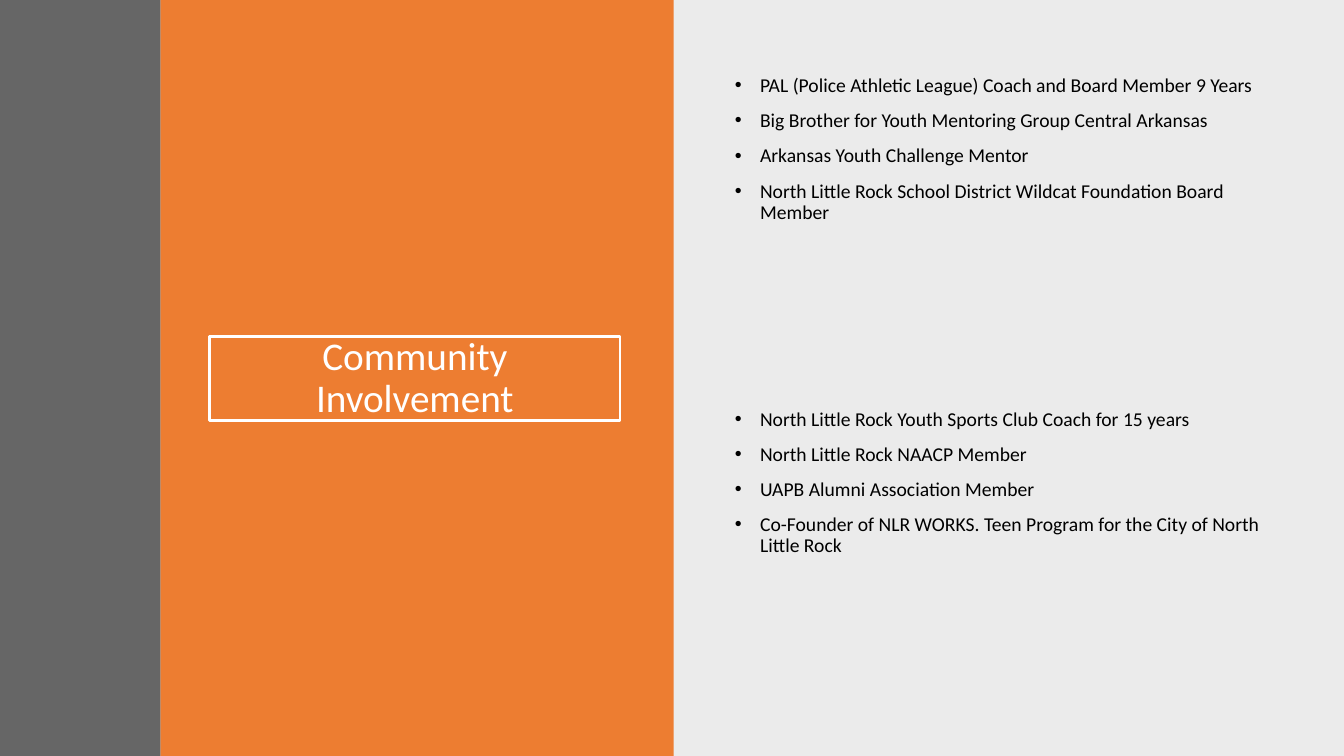
from pptx import Presentation
from pptx.dml.color import RGBColor
from pptx.enum.shapes import MSO_SHAPE
from pptx.enum.text import MSO_ANCHOR, PP_ALIGN
from pptx.oxml.ns import qn
from pptx.util import Inches, Pt
from lxml import etree

RECT = MSO_SHAPE.RECTANGLE
MIDDLE, TOP = MSO_ANCHOR.MIDDLE, MSO_ANCHOR.TOP
CENTER, LEFT = PP_ALIGN.CENTER, PP_ALIGN.LEFT

COLORS = {"black": "000000", "orange": "ED7D31", "gray": "404040", "white": "FFFFFF"}
TITLE = "Community Involvement"
ROLES = [
    ["PAL (Police Athletic League) Coach and Board Member 9 Years",
     "Big Brother for Youth Mentoring Group Central Arkansas",
     "Arkansas Youth Challenge Mentor",
     "North Little Rock School District Wildcat Foundation Board Member"],
    ["North Little Rock Youth Sports Club Coach for 15 years",
     "North Little Rock NAACP Member",
     "UAPB Alumni Association Member",
     "Co-Founder of NLR WORKS. Teen Program for the City of North Little Rock"],
]
# left, width, color, opacity in percent
BANDS = [(6.67, 6.67, "black", 8), (1.59, 5.09, "orange", 100), (0, 1.59, "gray", 80)]
TITLE_BOX = (2.08, 3.34, 4.07, 0.83)
LIST_LEFT, LIST_TOP, LIST_WIDTH, LIST_HEIGHT, LIST_STEP = 7.19, 0.7, 5.53, 2.79, 3.31
TITLE_FONT = {"name": "Calibri", "size": Pt(28)}
LIST_FONT = {"name": "Calibri", "size": Pt(14)}


def rgb(name):
    return RGBColor.from_string(COLORS[name])


def add_band(slide, left, width, color, opacity):
    band = slide.shapes.add_shape(RECT, Inches(left), 0, Inches(width), Inches(7.5))
    band.shadow.inherit = False
    band.line.fill.background()
    band.fill.solid()
    band.fill.fore_color.rgb = rgb(color)
    if opacity < 100:
        tone = band.fill._xPr.find(qn("a:solidFill"))[0]
        etree.SubElement(tone, qn("a:alpha"), val=str(opacity * 1000))


def add_bullet(para):
    props = para._p.get_or_add_pPr()
    props.set("marL", str(Inches(0.25)))
    props.set("indent", str(Inches(-0.25)))
    etree.SubElement(props, qn("a:buFont"), typeface="Arial")
    etree.SubElement(props, qn("a:buChar"), char="•")


def add_text(slide, box, lines, font, color, align, anchor, bullets=False):
    shape = slide.shapes.add_textbox(*map(Inches, box))
    frame = shape.text_frame
    frame.word_wrap = True
    frame.vertical_anchor = anchor
    for i, line in enumerate(lines):
        para = frame.add_paragraph() if i else frame.paragraphs[0]
        para.alignment = align
        para.line_spacing = 0.9
        if i:
            para.space_before = Pt(10)
        if bullets:
            add_bullet(para)
        run = para.add_run()
        run.text = line
        for key, value in font.items():
            setattr(run.font, key, value)
        run.font.color.rgb = rgb(color)
    return shape


def main():
    deck = Presentation()
    deck.slide_width, deck.slide_height = Inches(13.33), Inches(7.5)
    slide = deck.slides.add_slide(deck.slide_layouts[6])
    for band in BANDS:
        add_band(slide, *band)

    title = add_text(slide, TITLE_BOX, [TITLE], TITLE_FONT, "white", CENTER, MIDDLE)
    title.text_frame.margin_left = title.text_frame.margin_right = Inches(0.15)
    title.line.color.rgb = rgb("white")
    title.line.width = Pt(2)

    for i, roles in enumerate(ROLES):
        box = (LIST_LEFT, LIST_TOP + i * LIST_STEP, LIST_WIDTH, LIST_HEIGHT)
        add_text(slide, box, roles, LIST_FONT, "black", LEFT, TOP, bullets=True)
    deck.save("out.pptx")


if __name__ == "__main__":
    main()
